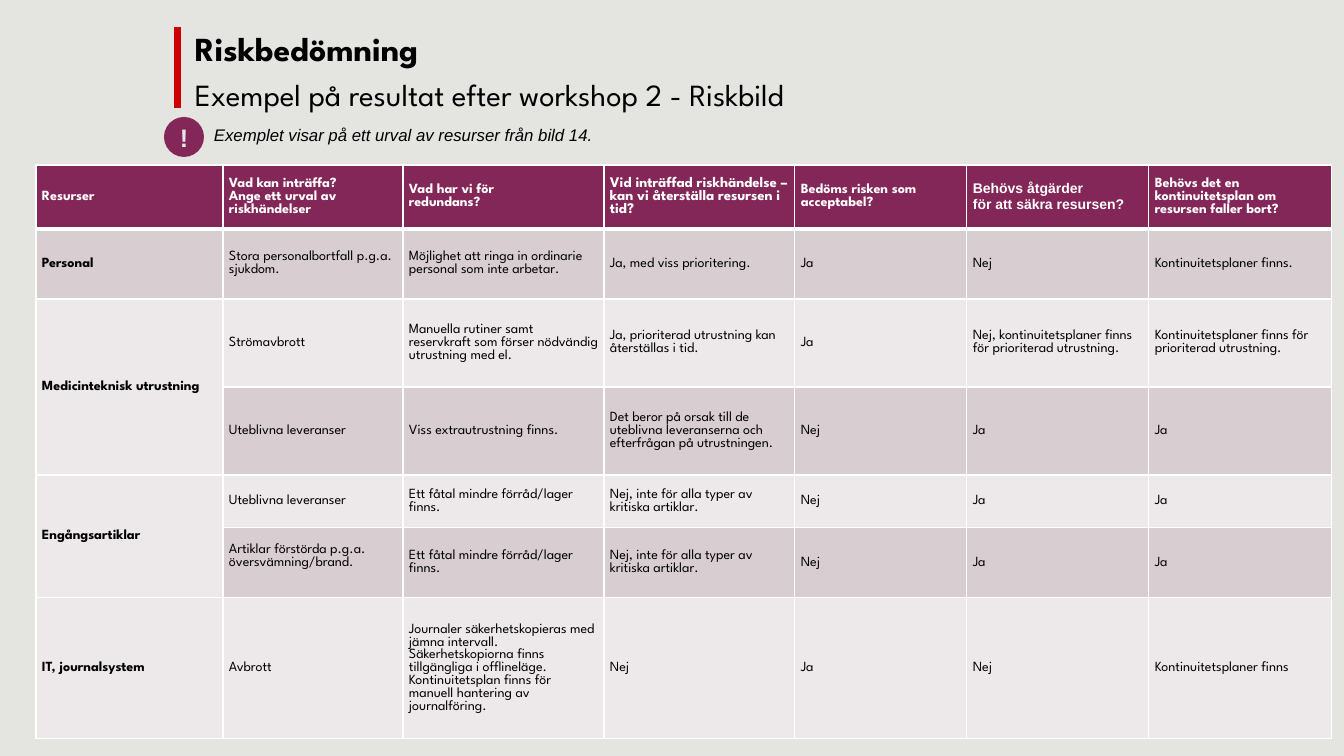
from pptx import Presentation
from pptx.dml.color import RGBColor
from pptx.enum.shapes import MSO_CONNECTOR, MSO_SHAPE
from pptx.enum.text import MSO_ANCHOR, PP_ALIGN
from pptx.oxml import parse_xml
from pptx.oxml.ns import nsdecls
from pptx.util import Pt

PX = 9071.43
MIDDLE, CENTER = MSO_ANCHOR.MIDDLE, PP_ALIGN.CENTER
OVAL, STRAIGHT = MSO_SHAPE.OVAL, MSO_CONNECTOR.STRAIGHT
SPARTAN, ARIAL = "League Spartan", "Arial"
PLUM, ROSE, PALE = "822757", "D8CDD1", "EDE8EA"
BLACK, WHITE = "000000", "FFFFFF"


def px(*vals):
    return [round(v * PX) for v in vals]


def style(para, tone, **form):
    for run in para.runs:
        run.font.color.rgb = RGBColor.from_string(tone)
        for key, val in form.items():
            setattr(run.font, key, val)


deck = Presentation()
deck.slide_width, deck.slide_height = px(1344, 756)
slide = deck.slides.add_slide(deck.slide_layouts[6])
slide.background.fill.solid()
slide.background.fill.fore_color.rgb = RGBColor.from_string("E4E4E1")

# Risk table
HEAD = ["Resurser", "Vad kan inträffa? \nAnge ett urval av riskhändelser",
        "Vad har vi för \nredundans?",
        "Vid inträffad riskhändelse – kan vi återställa resursen i tid?",
        "Bedöms risken som acceptabel?",
        "Behövs åtgärder\nför att säkra resursen?",
        "Behövs det en kontinuitetsplan om \nresursen faller bort?"]
STOCK = "Ett fåtal mindre förråd/lager finns."
PART = "Nej, inte för alla typer av kritiska artiklar."
ROWS = [
    HEAD,
    ["Personal", "Stora personalbortfall p.g.a. sjukdom.",
     "Möjlighet att ringa in ordinarie personal som inte arbetar.",
     "Ja, med viss prioritering.", "Ja", "Nej", "Kontinuitetsplaner finns."],
    ["Medicinteknisk utrustning", "Strömavbrott",
     "Manuella rutiner samt reservkraft som förser nödvändig utrustning med el.",
     "Ja, prioriterad utrustning kan återställas i tid.", "Ja",
     "Nej, kontinuitetsplaner finns för prioriterad utrustning.",
     "Kontinuitetsplaner finns för prioriterad utrustning."],
    ["", "Uteblivna leveranser", "Viss extrautrustning finns.",
     "Det beror på orsak till de uteblivna leveranserna och efterfrågan på utrustningen.",
     "Nej", "Ja", "Ja"],
    ["Engångsartiklar", "Uteblivna leveranser", STOCK, PART, "Nej", "Ja", "Ja"],
    ["", "Artiklar förstörda p.g.a. översvämning/brand.", STOCK, PART,
     "Nej", "Ja", "Ja"],
    ["IT, journalsystem", "Avbrott",
     "Journaler säkerhetskopieras med jämna intervall. Säkerhetskopiorna finns "
     "tillgängliga i offlineläge. Kontinuitetsplan finns för manuell hantering "
     "av journalföring.", "Nej", "Ja", "Nej", "Kontinuitetsplaner finns"],
]
WIDE = [187, 180, 201, 191, 172, 182, 183]
HIGH = [64, 70, 88, 88, 53, 70, 141]

grid = slide.shapes.add_table(
    len(ROWS), len(HEAD), *px(36, 165, sum(WIDE), sum(HIGH))).table
for col, wide in zip(grid.columns, px(*WIDE)):
    col.width = wide
for row, high in zip(grid.rows, px(*HIGH)):
    row.height = high
for top in (2, 4):
    grid.cell(top, 0).merge(grid.cell(top + 1, 0))

for r, texts in enumerate(ROWS):
    for c, text in enumerate(texts):
        cell = grid.cell(r, c)
        head = r == 0
        cell.vertical_anchor = MIDDLE
        pad = 4 if head else 8
        cell.margin_left, cell.margin_right = px(6, 0 if head else 6)
        # The flood and fire cell sits half a line high
        cell.margin_top, cell.margin_bottom = px(
            pad, pad + 13 if (r, c) == (5, 1) else pad)
        para = cell.text_frame.paragraphs[0]
        if text:
            para.text = text
        style(para, WHITE if head else BLACK, bold=head or c == 0,
              size=Pt(10.5 if head and c == 3 else 10),
              name=ARIAL if head and c == 5 else SPARTAN)
        # Cell borders come before the fill
        props = cell._tc.get_or_add_tcPr()
        for side in "LRTB":
            thick = 3 if (head and side == "B") or (r == 1 and side == "T") else 1
            props.append(parse_xml(
                f'<a:ln{side} {nsdecls("a")} w="{Pt(thick)}"><a:solidFill>'
                f'<a:srgbClr val="{WHITE}"/></a:solidFill></a:ln{side}>'))
        cell.fill.solid()
        tone = PLUM if head else ROSE if r % 2 else PALE
        cell.fill.fore_color.rgb = RGBColor.from_string(tone)

# Title and red bar
frame = slide.shapes.add_textbox(*px(185, 30, 991, 81)).text_frame
frame.word_wrap = True
frame.vertical_anchor = MIDDLE
for i, (text, size) in enumerate([
        ("Riskbedömning", 24),
        ("Exempel på resultat efter workshop 2 - Riskbild", 22)]):
    para = frame.add_paragraph() if i else frame.paragraphs[0]
    para.text = text
    para.space_before = Pt(5 * i)
    style(para, BLACK, name=SPARTAN, size=Pt(size), bold=i == 0)

bar = slide.shapes.add_connector(STRAIGHT, *px(178, 27, 178, 108))
bar.line.color.rgb = RGBColor.from_string("CC0000")
bar.line.width = Pt(5)
bar._element.spPr.append(parse_xml(f'<a:effectLst {nsdecls("a")}/>'))

# Note with its badge
frame = slide.shapes.add_textbox(*px(204, 120, 627, 30)).text_frame
frame.word_wrap = True
note = frame.paragraphs[0]
note.text = "Exemplet visar på ett urval av resurser från bild 14."
style(note, BLACK, name=ARIAL, size=Pt(12), italic=True)

badge = slide.shapes.add_shape(OVAL, *px(164, 117, 40, 40))
badge.shadow.inherit = False
badge.fill.solid()
badge.fill.fore_color.rgb = RGBColor.from_string(PLUM)
badge.line.fill.background()
frame = badge.text_frame
frame.vertical_anchor = MIDDLE
for side in ("left", "top", "right", "bottom"):
    setattr(frame, f"margin_{side}", 0)
mark = frame.paragraphs[0]
mark.text = "!"
mark.alignment = CENTER
style(mark, "E7E6E6", name=ARIAL, size=Pt(18), bold=True)

deck.save("out.pptx")
